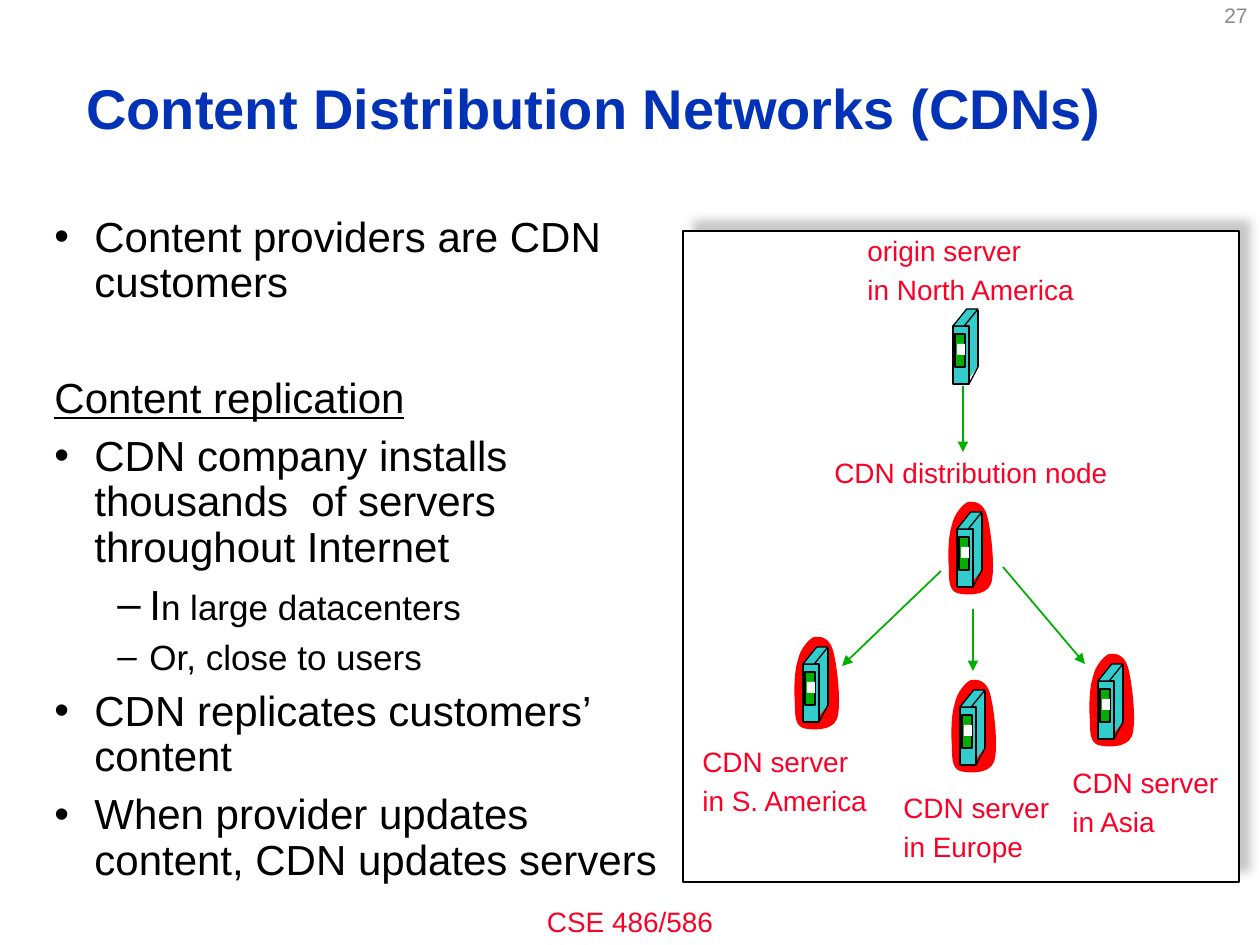
from lxml import etree
from pptx import Presentation
from pptx.dml.color import RGBColor
from pptx.enum.shapes import MSO_CONNECTOR, MSO_SHAPE
from pptx.enum.text import MSO_ANCHOR, PP_ALIGN
from pptx.oxml.ns import qn
from pptx.util import Emu, Pt

RECT, SLANT = MSO_SHAPE.RECTANGLE, MSO_SHAPE.PARALLELOGRAM
LINE = MSO_CONNECTOR.STRAIGHT
TOP, MID = MSO_ANCHOR.TOP, MSO_ANCHOR.MIDDLE
LEFT, MIDDLE, RIGHT = PP_ALIGN.LEFT, PP_ALIGN.CENTER, PP_ALIGN.RIGHT
FONT = "Arial"
SCALE = 914400 / 126

HUES = {
    "title": "0332B7", "body": "000000", "label": "FC0128", "number": "898989",
    "panel": "FFFFFF", "edge": "000000", "shade": "919191", "case": "33CCCC",
    "slot": "00AE00", "light": "FFFFFF", "halo": "FF0000", "arrow": "00AE00",
}

TITLE = ("Content Distribution Networks (CDNs)", (74, 32, 1106, 158))
FOOTER = ("CSE 486/586", (420, 898, 420, 47))
NUMBER = ("27", (966, -10, 294, 50))

BODY_BOX = (42, 210, 651, 651)
BODY = [
    ("•", 0, [("Content providers are CDN customers", 24)]),
    ("", 40, [("Content replication", 24)]),
    ("•", 7.5, [("CDN company installs thousands  of servers throughout Internet", 24)]),
    ("–", 7.2, [("I", 24), ("n large datacenters", 20)]),
    ("–", 6, [("Or, close to users", 20)]),
    ("•", 7.2, [("CDN replicates customers’ content", 24)]),
    ("•", 7.2, [("When provider updates content, CDN updates servers", 24)]),
]
INDENTS = {"•": (40, -40), "": (40, -40), "–": (95, -32)}

PANEL = (683, 231, 556, 651)
LABELS = [
    (("origin server", "in North America"), (855, 227, 234, 87)),
    (("CDN distribution node",), (822, 449, 300, 47)),
    (("CDN server", "in S. America"), (690, 738, 192, 87)),
    (("CDN server", "in Europe"), (891, 784, 171, 87)),
    (("CDN server", "in Asia"), (1060, 759, 171, 87)),
]
ARROWS = [
    (963, 386, 963, 452), (941, 571, 842, 666),
    (973, 609, 973, 671), (1003, 567, 1085, 664),
]

ORIGIN = (953, 309)
NODES = [(794, 636), (951, 679), (1089, 653), (948, 501)]
INSET = (9, 11)
PARTS = [
    (SLANT, (0, 58, 25, 17), "case", None),
    (RECT, (13, 1, 11, 58), "case", None),
    (RECT, (0, 17, 16, 58), "case", "edge"),
    (SLANT, (0, 0, 25, 17), "case", "edge"),
    (RECT, (2, 25, 10, 33), "slot", "edge"),
    (RECT, (4, 35, 8, 11), "light", None),
]
EDGES = [(25, 1, 25, 58), (25, 58, 16, 75)]
START = (4, 24)
CURVES = [
    (6, 13), (15, 3), (20, 1),
    (26, 0), (35, 1), (39, 14),
    (43, 28), (48, 69), (43, 83),
    (38, 96), (16, 94), (9, 92),
    (1, 89), (1, 79), (1, 68),
    (0, 57), (0, 35), (4, 24),
]


def px(n):
    return Emu(round(n * SCALE))


def hue(name):
    return RGBColor.from_string(HUES[name])


def paint(shape, fill, edge=None):
    shape.shadow.inherit = False
    shape.fill.solid()
    shape.fill.fore_color.rgb = hue(fill)
    if edge:
        shape.line.color.rgb = hue(edge)
        shape.line.width = Pt(0.75)
    else:
        shape.line.fill.background()


def add_box(shapes, kind, box, fill, edge=None):
    shape = shapes.add_shape(kind, *map(px, box))
    paint(shape, fill, edge)
    return shape


def add_line(shapes, ends, color, width, arrow=False):
    line = shapes.add_connector(LINE, *map(px, ends))
    line.line.color.rgb = hue(color)
    line.line.width = Pt(width)
    if arrow:
        etree.SubElement(line.line._get_or_add_ln(), qn("a:tailEnd"), type="triangle")
    etree.SubElement(line._element.spPr, qn("a:effectLst"))


def style(run, size, color, bold=False):
    run.font.name = FONT
    run.font.size = Pt(size)
    run.font.bold = bold
    run.font.color.rgb = hue(color)


def add_text(shapes, lines, box, size, color, align=LEFT, anchor=TOP, wrap=True, bold=False):
    frame = shapes.add_textbox(*map(px, box)).text_frame
    frame.word_wrap = wrap
    frame.vertical_anchor = anchor
    frame.text = "\n".join(lines)
    for i, para in enumerate(frame.paragraphs):
        para.alignment = align
        para.space_before = Pt(0.2 * size if i else 0)
        style(para.runs[0], size, color, bold)
    return frame


def add_body(shapes):
    frame = shapes.add_textbox(*map(px, BODY_BOX)).text_frame
    frame.word_wrap = True
    for i, (mark, gap, runs) in enumerate(BODY):
        para = frame.add_paragraph() if i else frame.paragraphs[0]
        para.line_spacing = 0.9
        para.space_before = Pt(gap)
        para.level = int(mark == "–")
        for text, size in runs:
            run = para.add_run()
            run.text = text
            style(run, size, "body")
            run.font.underline = not mark
        props = para._p.get_or_add_pPr()
        margin, indent = INDENTS[mark]
        props.set("marL", str(px(margin)))
        props.set("indent", str(px(indent)))
        if mark:
            etree.SubElement(props, qn("a:buFont"), typeface=FONT)
            etree.SubElement(props, qn("a:buChar"), char=mark)


def add_panel(shapes):
    panel = add_box(shapes, RECT, PANEL, "panel", "edge")
    effects = panel._element.spPr.find(qn("a:effectLst"))
    shadow = etree.SubElement(
        effects, qn("a:outerShdw"), blurRad=str(Pt(5)), dist=str(Pt(8.5)),
        dir="18900000", algn="ctr", rotWithShape="0")
    color = etree.SubElement(shadow, qn("a:srgbClr"), val=HUES["shade"])
    etree.SubElement(color, qn("a:alpha"), val="50000")


def add_halo(shapes, x, y):
    pen = shapes.build_freeform(px(x + START[0]), px(y + START[1]))
    pen.add_line_segments([(px(x + u), px(y + v)) for u, v in CURVES], close=True)
    halo = pen.convert_to_shape()
    paint(halo, "halo")
    lines = list(halo._element.iter(qn("a:lnTo")))
    for i in range(0, len(lines), 3):
        curve = etree.Element(qn("a:cubicBezTo"))
        lines[i].addprevious(curve)
        for line in lines[i:i + 3]:
            curve.append(line[0])
            line.getparent().remove(line)


def add_server(shapes, x, y):
    for kind, (u, v, w, h), fill, edge in PARTS:
        part = add_box(shapes, kind, (x + u, y + v, w, h), fill, edge)
        if kind == SLANT:
            part.adjustments[0] = 0.81
    for a, b, c, d in EDGES:
        add_line(shapes, (x + a, y + b, x + c, y + d), "edge", 0.75)


def main():
    deck = Presentation()
    deck.slide_width, deck.slide_height = px(1260), px(945)
    shapes = deck.slides.add_slide(deck.slide_layouts[6]).shapes
    add_text(shapes, [FOOTER[0]], FOOTER[1], 16, "label", MIDDLE)
    title = add_text(shapes, [TITLE[0]], TITLE[1], 32, "title", anchor=MID, bold=True)
    title.paragraphs[0].line_spacing = 0.9
    add_body(shapes)
    add_panel(shapes)
    add_server(shapes.add_group_shape().shapes, *ORIGIN)
    for x, y in NODES:
        group = shapes.add_group_shape().shapes
        add_halo(group, x, y)
        add_server(group, x + INSET[0], y + INSET[1])
    for lines, box in LABELS:
        add_text(shapes, lines, box, 16, "label", wrap=False)
    for ends in ARROWS:
        add_line(shapes, ends, "arrow", 1, arrow=True)
    add_text(shapes, [NUMBER[0]], NUMBER[1], 12, "number", RIGHT, MID)
    deck.save("out.pptx")


if __name__ == "__main__":
    main()
